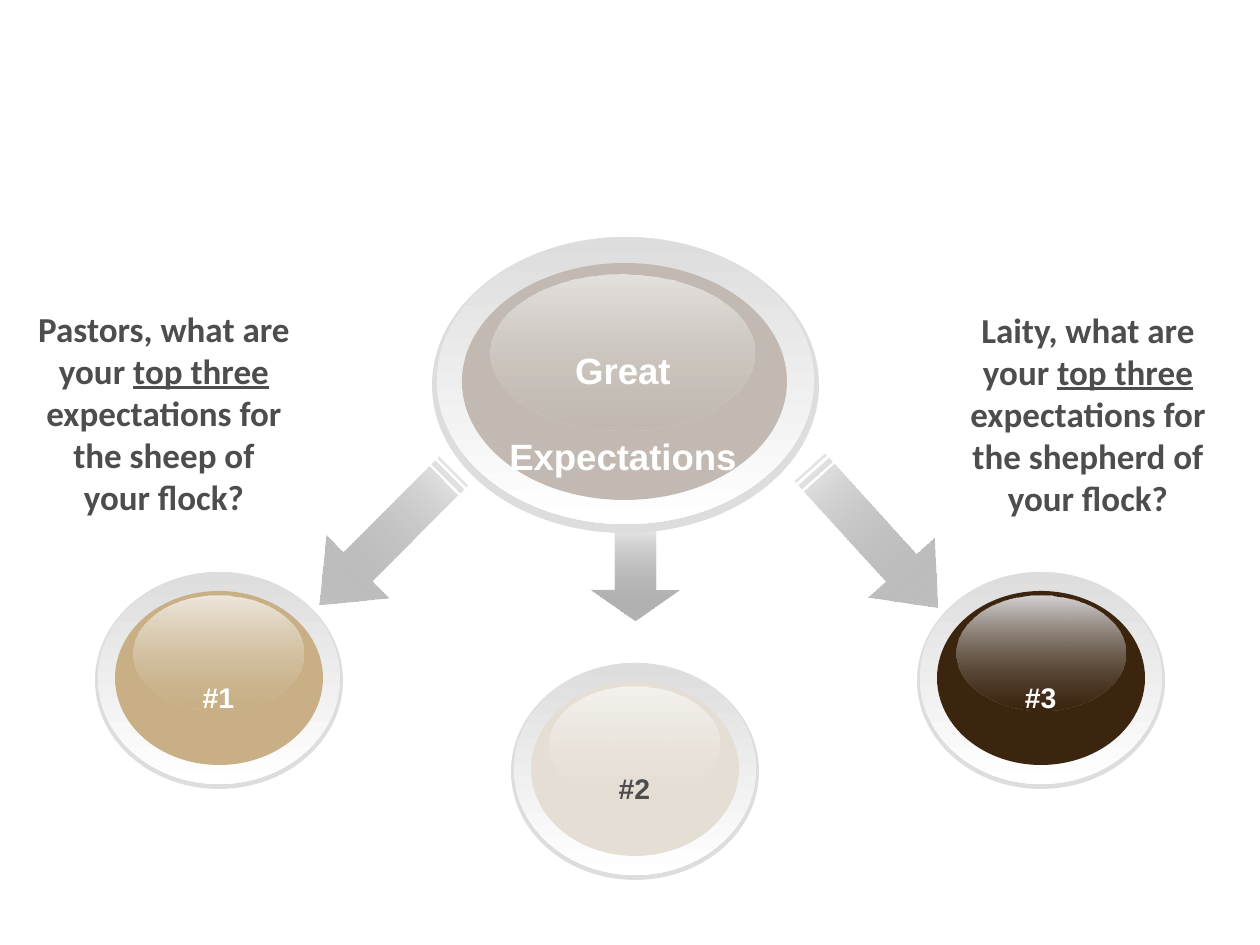
from lxml.etree import SubElement
from pptx import Presentation
from pptx.dml.color import RGBColor as RGB
from pptx.enum.shapes import MSO_SHAPE as Preset
from pptx.enum.text import MSO_AUTO_SIZE as AutoSize, PP_ALIGN as Align
from pptx.oxml.ns import qn
from pptx.util import Emu, Pt

WHITE = RGB(0xFF, 0xFF, 0xFF)
SILVER = RGB(0xDD, 0xDD, 0xDD)
CHARCOAL = RGB(0x4D, 0x4D, 0x4D)
TAUPE = RGB(0xC2, 0xBA, 0xB2)
TAUPE_LIGHT = RGB(0xE4, 0xE1, 0xDE)
TAN = RGB(0xC8, 0xAF, 0x85)
TAN_LIGHT = RGB(0xED, 0xE7, 0xDD)
CREAM = RGB(0xE5, 0xDE, 0xD4)
CREAM_LIGHT = RGB(0xF4, 0xF2, 0xEE)
BROWN = RGB(0x3B, 0x25, 0x0F)
BROWN_LIGHT = RGB(0xD4, 0xD3, 0xD3)

BIG_LAYERS = [(0, 0, 387, 296), (5, 0, 377, 287), (30, 26, 325, 237),
              (59, 38, 263, 155), (46, 63, 290, 115)]
SMALL_LAYERS = [(0, 0, 248, 217), (3, 0, 242, 212), (20, 19, 208, 174),
                (39, 24, 169, 115), (39, 69, 169, 52)]


def px(length):
    return Emu(round(length * 914400 / 126))


class Deck:
    label_format = {"name": "Arial", "bold": True}
    question_format = {"name": "Calibri", "bold": True,
                       "size": Pt(20)}

    def __init__(self, width, height):
        self.presentation = Presentation()
        self.presentation.slide_width = px(width)
        self.presentation.slide_height = px(height)
        self.slide = self.presentation.slides.add_slide(
            self.presentation.slide_layouts[6])

    def shape(self, parent, preset, box, fill, angle=0, opacity=100):
        shape = parent.add_shape(preset, *map(px, box))
        shape.shadow.inherit = False
        shape.line.fill.background()
        if isinstance(fill, RGB):
            shape.fill.solid()
            shape.fill.fore_color.rgb = fill
            return shape
        shape.fill.gradient()
        shape.fill.gradient_angle = angle
        for stop, color in zip(shape.fill.gradient_stops, fill):
            stop.color.rgb = color
        if opacity < 100:
            last_color = list(shape._element.iter(qn("a:srgbClr")))[-1]
            SubElement(last_color, qn("a:alpha"), val=str(opacity * 1000))
        return shape

    def arrow(self, box, rotation, shaft, head):
        arrow = self.shape(self.slide.shapes, Preset.STRIPED_RIGHT_ARROW, box,
                           (WHITE, CHARCOAL), opacity=42)
        arrow.rotation = rotation
        arrow.adjustments[0] = shaft
        arrow.adjustments[1] = head

    def text(self, parent, box, paragraphs, formats, color, wrap=True, baseline=0):
        frame = parent.add_textbox(*map(px, box)).text_frame
        frame.word_wrap = wrap
        frame.auto_size = AutoSize.SHAPE_TO_FIT_TEXT
        for index, pieces in enumerate(paragraphs):
            paragraph = frame.add_paragraph() if index else frame.paragraphs[0]
            paragraph.alignment = Align.CENTER
            for words, underlined in pieces:
                run = paragraph.add_run()
                run.text = words
                for name, value in formats.items():
                    setattr(run.font, name, value)
                run.font.color.rgb = color
                if underlined:
                    run.font.underline = True
                if baseline:
                    run._r.get_or_add_rPr().set("baseline", str(baseline * 1000))

    def ball(self, left, top, layers, lines, size, core_color, light,
             text_color=WHITE, wrap=True):
        parts = self.slide.shapes.add_group_shape().shapes
        edge, rim, core, gloss, label = [
            (left + x, top + y, width, height) for x, y, width, height in layers]
        self.shape(parts, Preset.OVAL, edge, SILVER)
        self.shape(parts, Preset.OVAL, rim, (SILVER, WHITE), angle=270)
        self.shape(parts, Preset.OVAL, core, core_color)
        self.shape(parts, Preset.OVAL, gloss, (light, core_color),
                   angle=270, opacity=37)
        self.text(parts, label, [[(line, False)] for line in lines],
                  {**self.label_format, "size": Pt(size)}, text_color,
                  wrap, baseline=-25)

    def question(self, left, top, audience, subject):
        pieces = [(f"{audience}, what are your ", False), ("top three ", True),
                  (f"expectations for the {subject} of your flock?", False)]
        self.text(self.slide.shapes, (left, top, 278, 224), [pieces],
                  self.question_format, CHARCOAL)


def main():
    deck = Deck(1260, 945)
    for box, rotation, shaft, head in [
            ((292, 493, 189, 89), 135, 0.46, 0.61),
            ((779, 493, 189, 89), 47.8, 0.46, 0.61),
            ((581, 522, 108, 89), 90, 0.46, 0.35)]:
        deck.arrow(box, rotation, shaft, head)

    deck.ball(432, 237, BIG_LAYERS, ["Great", "Expectations"], 36,
              TAUPE, TAUPE_LIGHT, wrap=False)
    for left, top, label, color, light, text_color in [
            (95, 572, "#1", TAN, TAN_LIGHT, WHITE),
            (917, 572, "#3", BROWN, BROWN_LIGHT, WHITE),
            (511, 663, "#2", CREAM, CREAM_LIGHT, CHARCOAL)]:
        deck.ball(left, top, SMALL_LAYERS, [label], 28, color, light, text_color)

    deck.question(25, 301, "Pastors", "sheep")
    deck.question(949, 302, "Laity", "shepherd")
    deck.presentation.save("out.pptx")


if __name__ == "__main__":
    main()
